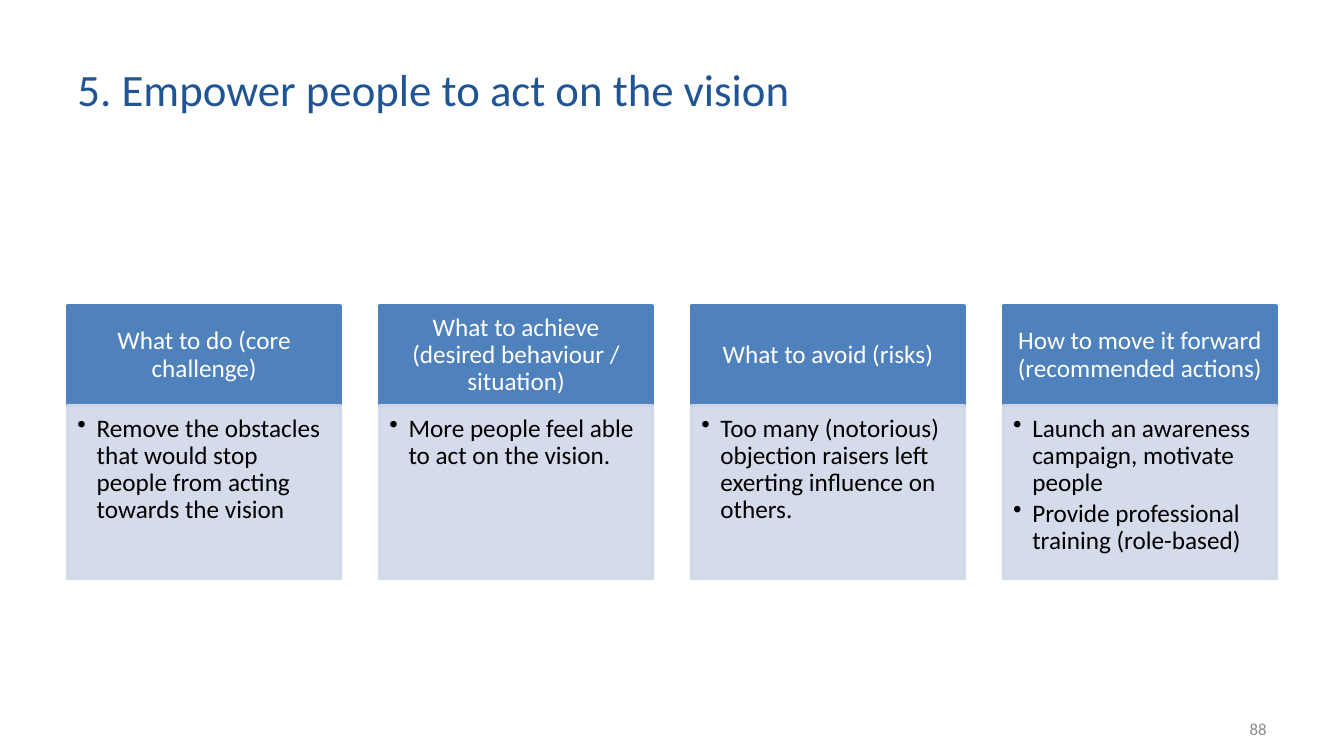
from dataclasses import dataclass

import lxml.etree
import pptx
import pptx.dml.color
import pptx.enum.shapes
import pptx.enum.text
import pptx.oxml.ns
import pptx.util

Inches = pptx.util.Inches
Align = pptx.enum.text.PP_ALIGN
Anchor = pptx.enum.text.MSO_ANCHOR


@dataclass(frozen=True)
class Theme:
    font: str = "Calibri"
    title_color: str = "205595"
    header_fill: str = "4F81BD"
    header_text: str = "FFFFFF"
    body_fill: str = "D0D8E8"
    body_text: str = "000000"
    number_color: str = "8C8C8C"
    title_size: int = 32
    card_size: int = 18
    number_size: int = 12
    outline: int = 2
    body_opacity: int = 90


THEME = Theme()
PAGE_WIDTH, PAGE_HEIGHT = 13.33, 7.5
MARGIN = 0.67
CARD_WIDTH = 2.71
HEADER_TOP, HEADER_HEIGHT = 3.03, 0.99
BODY_HEIGHT = 1.72
HEADER_INSETS = (0.14, 0.08, 0.14, 0.08)
BODY_INSETS = (0.1, 0.1, 0.14, 0.16)
LABEL_INSETS = (0.1, 0.05, 0.1, 0.05)
BULLET_INDENT = 0.19

CARDS = [
    ("What to do (core challenge)",
     ["Remove the obstacles that would stop people from acting towards the vision"]),
    ("What to achieve (desired behaviour / situation)",
     ["More people feel able to act on the vision."]),
    ("What to avoid (risks)",
     ["Too many (notorious) objection raisers left exerting influence on others."]),
    ("How to move it forward (recommended actions)",
     ["Launch an awareness campaign, motivate people",
      "Provide professional training (role-based)"]),
]


def rgb(color):
    return pptx.dml.color.RGBColor.from_string(color)


def add_bullet(para):
    properties = para._p.get_or_add_pPr()
    indent = Inches(BULLET_INDENT)
    properties.set("marL", str(indent))
    properties.set("indent", str(-indent))
    bullet = lxml.etree.SubElement(properties, pptx.oxml.ns.qn("a:buChar"))
    bullet.set("char", "•")


def write_text(shape, lines, size, color, align, anchor, insets,
               line_spacing=1.0, space_after=0, bulleted=False):
    frame = shape.text_frame
    frame.word_wrap = True
    frame.vertical_anchor = anchor
    (frame.margin_left, frame.margin_top,
     frame.margin_right, frame.margin_bottom) = map(Inches, insets)
    frame.text = "\n".join(lines)
    for para in frame.paragraphs:
        para.alignment = align
        para.line_spacing = line_spacing
        para.space_after = pptx.util.Pt(space_after)
        if bulleted:
            add_bullet(para)
        para.font.name = THEME.font
        para.font.size = pptx.util.Pt(size)
        para.font.color.rgb = rgb(color)


def add_label(page, area, text, size, color, align):
    box = page.shapes.add_textbox(*map(Inches, area))
    write_text(box, [text], size, color, align, Anchor.MIDDLE, LABEL_INSETS)


def add_panel(page, area, color, opacity=100):
    panel = page.shapes.add_shape(
        pptx.enum.shapes.MSO_SHAPE.RECTANGLE, *map(Inches, area))
    panel.shadow.inherit = False
    panel.fill.solid()
    panel.fill.fore_color.rgb = rgb(color)
    panel.line.color.rgb = rgb(color)
    panel.line.width = pptx.util.Pt(THEME.outline)
    if opacity < 100:
        for paint in panel.element.spPr.iter(pptx.oxml.ns.qn("a:srgbClr")):
            alpha = lxml.etree.SubElement(paint, pptx.oxml.ns.qn("a:alpha"))
            alpha.set("val", str(opacity * 1000))
    return panel


def add_card(page, left, heading, points):
    header = add_panel(page, (left, HEADER_TOP, CARD_WIDTH, HEADER_HEIGHT),
                       THEME.header_fill)
    write_text(header, [heading], THEME.card_size, THEME.header_text,
               Align.CENTER, Anchor.MIDDLE, HEADER_INSETS, line_spacing=0.9)
    body = add_panel(
        page, (left, HEADER_TOP + HEADER_HEIGHT, CARD_WIDTH, BODY_HEIGHT),
        THEME.body_fill, THEME.body_opacity)
    write_text(body, points, THEME.card_size, THEME.body_text,
               Align.LEFT, Anchor.TOP, BODY_INSETS, line_spacing=0.9,
               space_after=0.15 * THEME.card_size, bulleted=True)


def main():
    deck = pptx.Presentation()
    deck.slide_width = Inches(PAGE_WIDTH)
    deck.slide_height = Inches(PAGE_HEIGHT)
    page = deck.slides.add_slide(deck.slide_layouts[6])

    add_label(page, (MARGIN, 0.3, 9.91, 1.15),
              "5. Empower people to act on the vision",
              THEME.title_size, THEME.title_color, Align.LEFT)

    step = (PAGE_WIDTH - 2 * MARGIN - CARD_WIDTH) / (len(CARDS) - 1)
    for column, (heading, points) in enumerate(CARDS):
        add_card(page, MARGIN + column * step, heading, points)

    number_width = 3.11
    add_label(page, (PAGE_WIDTH - MARGIN - number_width, 7.03, number_width, 0.4),
              "88", THEME.number_size, THEME.number_color, Align.RIGHT)

    deck.save("out.pptx")


if __name__ == "__main__":
    main()
